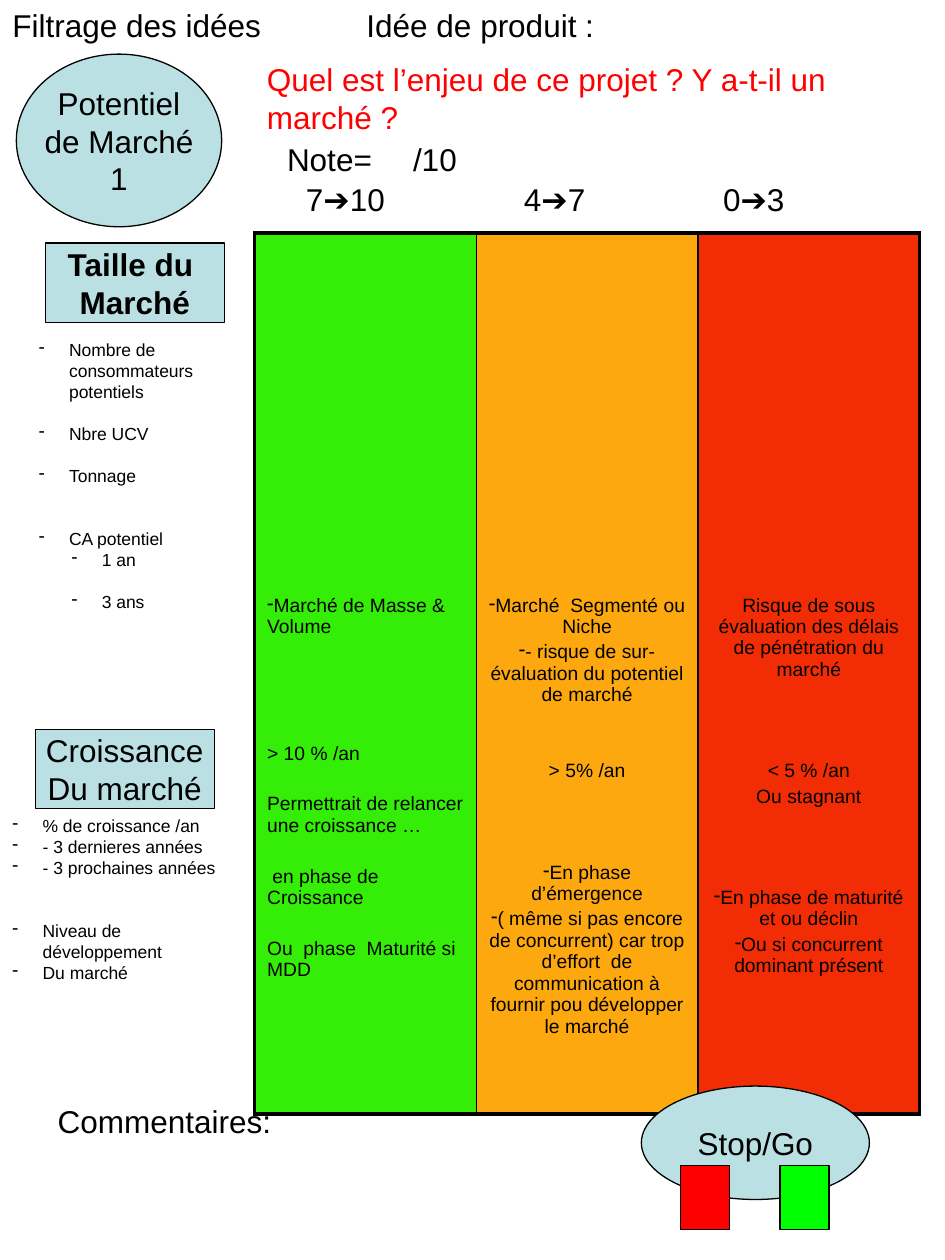
from lxml.etree import SubElement
from pptx import Presentation
from pptx.dml.color import RGBColor
from pptx.enum.shapes import MSO_SHAPE
from pptx.enum.text import MSO_ANCHOR, PP_ALIGN
from pptx.oxml.ns import qn
from pptx.util import Inches, Pt

UNIT = Inches(0.05)
COLUMNS, ROWS = 150, 200
PALE_BLUE = "BBE0E3"
LIST_LINE, CELL_LINE, CELL_GAP = 12, 14.5, 2.2


def color(value):
    """Turn a hex string into a colour."""
    return RGBColor.from_string(value)


def place(box, left, top, width, height):
    """Turn grid units inside a box into slide lengths."""
    return [round(value * UNIT) for value in (box[0] + left, box[1] + top, width, height)]


def add_run(paragraph, text, size=18, ink="000000", bold=False):
    """Add one styled run to a paragraph."""
    run = paragraph.add_run()
    run.text = text
    run.font.name = "Arial"
    run.font.size = Pt(size)
    run.font.bold = bold
    run.font.color.rgb = color(ink)


def add_dash(paragraph, margin=0.0, hanging=0.0):
    """Give a paragraph a dash bullet."""
    properties = paragraph._p.get_or_add_pPr()
    properties.set("marL", str(Inches(margin)))
    properties.set("indent", str(-Inches(hanging)))
    SubElement(properties, qn("a:buChar"), char="-")


def paragraphs_for(frame, items):
    """Pair each item with its own paragraph of the frame."""
    for index, item in enumerate(items):
        yield (frame.add_paragraph() if index else frame.paragraphs[0]), item


def add_label(slide, place_at, text, ink="000000", wrap=False):
    """Add a plain text box with one line of text."""
    frame = slide.shapes.add_textbox(*place_at).text_frame
    frame.word_wrap = wrap
    add_run(frame.paragraphs[0], text, ink=ink)


def add_figure(slide, kind, place_at, fill=PALE_BLUE, lines=(), bold=False):
    """Add an outlined shape with centred lines."""
    shape = slide.shapes.add_shape(kind, *place_at)
    shape.shadow.inherit = False
    shape.fill.solid()
    shape.fill.fore_color.rgb = color(fill)
    shape.line.color.rgb = color("000000")
    shape.line.width = Pt(0.75)
    frame = shape.text_frame
    frame.word_wrap = False
    frame.vertical_anchor = MSO_ANCHOR.MIDDLE
    for paragraph, line in paragraphs_for(frame, lines):
        paragraph.alignment = PP_ALIGN.CENTER
        add_run(paragraph, line, bold=bold)


def add_header(slide, box):
    """Place the titles, the question and the score scale."""
    add_label(slide, place(box, 0, 0, 43.8, 8), "Filtrage des idées")
    add_label(slide, place(box, 56.2, 0, 40.4, 8), "Idée de produit :")
    add_figure(slide, MSO_SHAPE.OVAL, place(box, 2.6, 8.6, 32.6, 27.4),
               lines=["Potentiel", "de Marché", "1"])
    add_label(slide, place(box, 40.4, 8.6, 93, 14.2),
              "Quel est l’enjeu de ce projet ? Y a-t-il un marché ?", "FF0000", True)
    add_label(slide, place(box, 43.6, 21.2, 31.2, 8), "Note=\t/10")
    for left, width, score in ((46.6, 17.8, "7➔10"), (81.2, 15, "4➔7"), (112.8, 15, "0➔3")):
        add_label(slide, place(box, left, 27.6, width, 8), score)


def add_criterion(slide, box, heading, heading_left, list_top, items, bold=False):
    """Place a heading and its list of (gap, level, text) items."""
    add_figure(slide, MSO_SHAPE.RECTANGLE, place(box, heading_left, 0, 28.4, 12.6),
               lines=heading, bold=bold)
    frame = slide.shapes.add_textbox(
        *place(box, 0, list_top, box[2], box[3] - list_top)).text_frame
    frame.word_wrap = True
    for paragraph, (gap, level, text) in paragraphs_for(frame, items):
        paragraph.level = level
        paragraph.space_before = Pt(gap * LIST_LINE)
        add_dash(paragraph, 0.5 if level else 0.24, 0.24)
        add_run(paragraph, text, 10)


def add_borders(cell, widths):
    """Draw the four cell borders in black."""
    properties = cell._tc.get_or_add_tcPr()
    for side, width in zip("LRTB", widths):
        line = SubElement(properties, qn(f"a:ln{side}"), w=str(Pt(width)))
        SubElement(SubElement(line, qn("a:solidFill")), qn("a:srgbClr"), val="000000")


def add_grid(slide, box, columns):
    """Place the table of (fill, alignment, items) columns."""
    table = slide.shapes.add_table(1, len(columns), *place(box, 0, 0, *box[2:])).table
    table.first_row = table.horz_banding = False
    last = len(columns) - 1
    for index, (fill, alignment, items) in enumerate(columns):
        cell = table.cell(0, index)
        add_borders(cell, (1 if index else 2.25, 1 if index < last else 2.25, 2.25, 2.25))
        cell.fill.solid()
        cell.fill.fore_color.rgb = color(fill)
        cell.margin_top = Inches(2.87)
        for paragraph, (gap, dash, text) in paragraphs_for(cell.text_frame, items):
            paragraph.alignment = alignment
            paragraph.space_before = Pt(CELL_GAP + gap * CELL_LINE)
            if dash:
                add_dash(paragraph)
            add_run(paragraph, text, 11)


def add_footer(slide, box):
    """Place the comments label and the decision marks."""
    add_label(slide, place(box, 7.2, 1.6, 38.2, 8), "Commentaires:")
    add_figure(slide, MSO_SHAPE.OVAL, place(box, 101.8, 0, 36.2, 18), lines=["Stop/Go"])
    for left, fill in ((108, "FF0000"), (123.8, "00FF00")):
        add_figure(slide, MSO_SHAPE.RECTANGLE, place(box, left, 12.6, 7.8, 10.2), fill)


SIZE_ITEMS = [
    (0, 0, "Nombre de consommateurs potentiels"),
    (1, 0, "Nbre UCV"),
    (1, 0, "Tonnage"),
    (2, 0, "CA potentiel"),
    (0, 1, "1 an"),
    (1, 1, "3 ans"),
]
GROWTH_ITEMS = [
    (0, 0, "% de croissance /an"),
    (0, 0, "- 3 dernieres années"),
    (0, 0, "- 3 prochaines années"),
    (2, 0, "Niveau de développement"),
    (0, 0, "Du marché"),
]
GRID_COLUMNS = [
    ("34EE08", PP_ALIGN.LEFT, [
        (0, True, "Marché de Masse & Volume"),
        (4, False, "> 10 % /an"),
        (1, False, "Permettrait de relancer une croissance …"),
        (1, False, " en phase de Croissance"),
        (1, False, "Ou  phase  Maturité si MDD"),
    ]),
    ("FDA80F", PP_ALIGN.CENTER, [
        (0, True, "Marché  Segmenté ou Niche"),
        (0, True, "- risque de sur-évaluation du potentiel de marché"),
        (2, False, "> 5% /an"),
        (3, True, "En phase d’émergence"),
        (0, True, "( même si pas encore de concurrent) car trop d’effort  de "
                  "communication à fournir pou développer le marché"),
    ]),
    ("F22C04", PP_ALIGN.CENTER, [
        (0, False, "Risque de sous évaluation des délais de pénétration du marché"),
        (3, False, "< 5 % /an"),
        (0, False, "Ou stagnant"),
        (3, True, "En phase de maturité et ou déclin"),
        (0, True, "Ou si concurrent dominant présent"),
    ]),
]


def main():
    """Build the slide and save it."""
    presentation = Presentation()
    presentation.slide_width = COLUMNS * UNIT
    presentation.slide_height = ROWS * UNIT
    slide = presentation.slides.add_slide(presentation.slide_layouts[6])
    add_header(slide, (0, 0, COLUMNS, 36))
    add_grid(slide, (40.4, 37, 105.6, 139.8), GRID_COLUMNS)
    add_criterion(slide, (4.2, 38.6, 37.8, 56.6), ["Taille du ", "Marché"],
                  3, 14.2, SIZE_ITEMS, True)
    add_criterion(slide, (0, 115.8, 37.8, 38.2), ["Croissance", "Du marché"],
                  5.6, 12.6, GROWTH_ITEMS)
    add_footer(slide, (0, 172.4, COLUMNS, 27.6))
    presentation.save("out.pptx")


if __name__ == "__main__":
    main()
